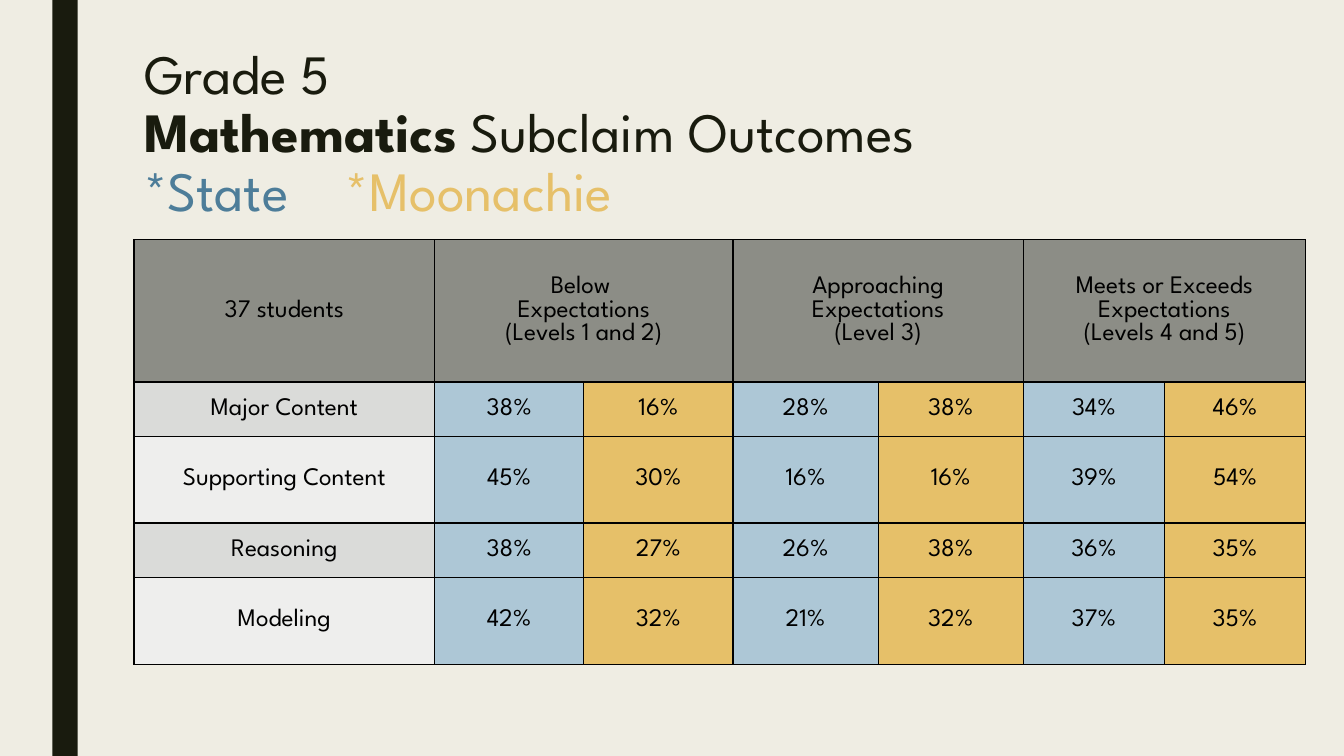
from dataclasses import dataclass
from typing import Optional

from lxml.etree import SubElement
from pptx import Presentation
from pptx.dml.color import RGBColor
from pptx.enum.shapes import MSO_SHAPE
from pptx.enum.text import MSO_ANCHOR, MSO_AUTO_SIZE, PP_ALIGN
from pptx.oxml.ns import qn
from pptx.util import Inches, Pt

FONT = "League Spartan"
COLORS = {
    "background": "EFEDE3",
    "ink": "191B0E",
    "black": "000000",
    "state_title": "4D7D99",
    "header": "8C8D86",
    "band_dark": "DADBD9",
    "band_light": "EEEEED",
    "state": "ADC7D6",
    "district": "E6C069",
}


@dataclass
class TitleRun:
    text: str
    color: str = "ink"
    bold: bool = False
    ends_line: bool = False


@dataclass
class Subclaim:
    name: str
    percents: list[int]  # state and district in turn, for each level
    height: float


TITLE_RUNS = [
    TitleRun("Grade 5 ", ends_line=True),
    TitleRun("Mathematics", bold=True),
    TitleRun(" Subclaim Outcomes", ends_line=True),
    TitleRun("*State \t", "state_title"),
    TitleRun("*Moonachie", "district"),
]
LEVELS = [
    ["Below ", "Expectations", "(Levels 1 and 2)"],
    ["Approaching", "Expectations", "(Level 3)"],
    ["Meets or Exceeds", "Expectations", "(Levels 4 and 5)"],
]
SUBCLAIMS = [
    Subclaim("Major Content", [38, 16, 28, 38, 34, 46], 0.54),
    Subclaim("Supporting Content", [45, 30, 16, 16, 39, 54], 0.86),
    Subclaim("Reasoning", [38, 27, 26, 38, 36, 35], 0.54),
    Subclaim("Modeling", [42, 32, 21, 32, 37, 35], 0.86),
]
COLUMN_WIDTHS = [2.98, 1.48, 1.48, 1.44, 1.44, 1.4, 1.4]
HEADER_HEIGHT = 1.41


def rgb(name: str) -> RGBColor:
    return RGBColor.from_string(COLORS[name])


def add_run(paragraph, text: str, size: float, color: str, bold: Optional[bool] = None) -> None:
    run = paragraph.add_run()
    run.text = text
    run.font.name = FONT
    run.font.size = Pt(size)
    run.font.bold = bold
    run.font.color.rgb = rgb(color)


def add_side_bar(slide) -> None:
    bar = slide.shapes.add_shape(
        MSO_SHAPE.RECTANGLE, Inches(0.52), 0, Inches(0.25), Inches(7.5))
    bar.shadow.inherit = False
    bar.fill.solid()
    bar.fill.fore_color.rgb = rgb("ink")
    bar.line.fill.background()


def fill_title(title) -> None:
    title.left, title.top = Inches(1.33), Inches(0.39)
    title.width, title.height = Inches(10.5), Inches(1.62)
    frame = title.text_frame
    frame.word_wrap = True
    frame.auto_size = MSO_AUTO_SIZE.NONE
    frame.vertical_anchor = MSO_ANCHOR.TOP
    frame.margin_top = Inches(0.07)
    paragraph = frame.paragraphs[0]
    paragraph.alignment = PP_ALIGN.LEFT
    paragraph.line_spacing = Pt(42)
    for part in TITLE_RUNS:
        add_run(paragraph, part.text, 39.6, part.color, part.bold)
        if part.ends_line:
            paragraph.add_line_break()


def add_borders(cell) -> None:
    properties = cell._tc.get_or_add_tcPr()
    for side in ("lnL", "lnR", "lnT", "lnB"):
        line = SubElement(properties, qn(f"a:{side}"), w=str(Pt(1)))
        fill = SubElement(line, qn("a:solidFill"))
        SubElement(fill, qn("a:srgbClr"), val=COLORS["black"])


def fill_cell(cell, lines: list[str], color: str) -> None:
    cell.fill.solid()
    cell.fill.fore_color.rgb = rgb(color)
    cell.vertical_anchor = MSO_ANCHOR.MIDDLE
    cell.margin_left = cell.margin_right = Inches(0.14)
    cell.margin_top = cell.margin_bottom = Inches(0.05)
    frame = cell.text_frame
    for index, text in enumerate(lines):
        paragraph = frame.add_paragraph() if index else frame.paragraphs[0]
        paragraph.alignment = PP_ALIGN.CENTER
        add_run(paragraph, text, 18, "black")


def add_outcomes_table(slide) -> None:
    heights = [HEADER_HEIGHT] + [subclaim.height for subclaim in SUBCLAIMS]
    table = slide.shapes.add_table(
        len(heights), len(COLUMN_WIDTHS), Inches(1.33), Inches(2.38),
        Inches(sum(COLUMN_WIDTHS)), Inches(sum(heights))).table
    for column, width in zip(table.columns, COLUMN_WIDTHS):
        column.width = Inches(width)
    for row, height in zip(table.rows, heights):
        row.height = Inches(height)
    for cell in table.iter_cells():
        add_borders(cell)

    # Header row: each level spans a state and a district column
    fill_cell(table.cell(0, 0), ["37 students"], "header")
    for index, lines in enumerate(LEVELS):
        first = 1 + 2 * index
        table.cell(0, first).merge(table.cell(0, first + 1))
        fill_cell(table.cell(0, first), lines, "header")

    # Subclaim rows
    for row, subclaim in enumerate(SUBCLAIMS, start=1):
        band = "band_dark" if row % 2 else "band_light"
        fill_cell(table.cell(row, 0), [subclaim.name], band)
        for column, percent in enumerate(subclaim.percents, start=1):
            color = "state" if column % 2 else "district"
            fill_cell(table.cell(row, column), [f"{percent}%"], color)


def main() -> None:
    presentation = Presentation()
    presentation.slide_width = Inches(13.33)
    presentation.slide_height = Inches(7.5)
    slide = presentation.slides.add_slide(presentation.slide_layouts[5])
    slide.background.fill.solid()
    slide.background.fill.fore_color.rgb = rgb("background")
    add_side_bar(slide)
    fill_title(slide.shapes.title)
    add_outcomes_table(slide)
    presentation.save("out.pptx")


if __name__ == "__main__":
    main()
